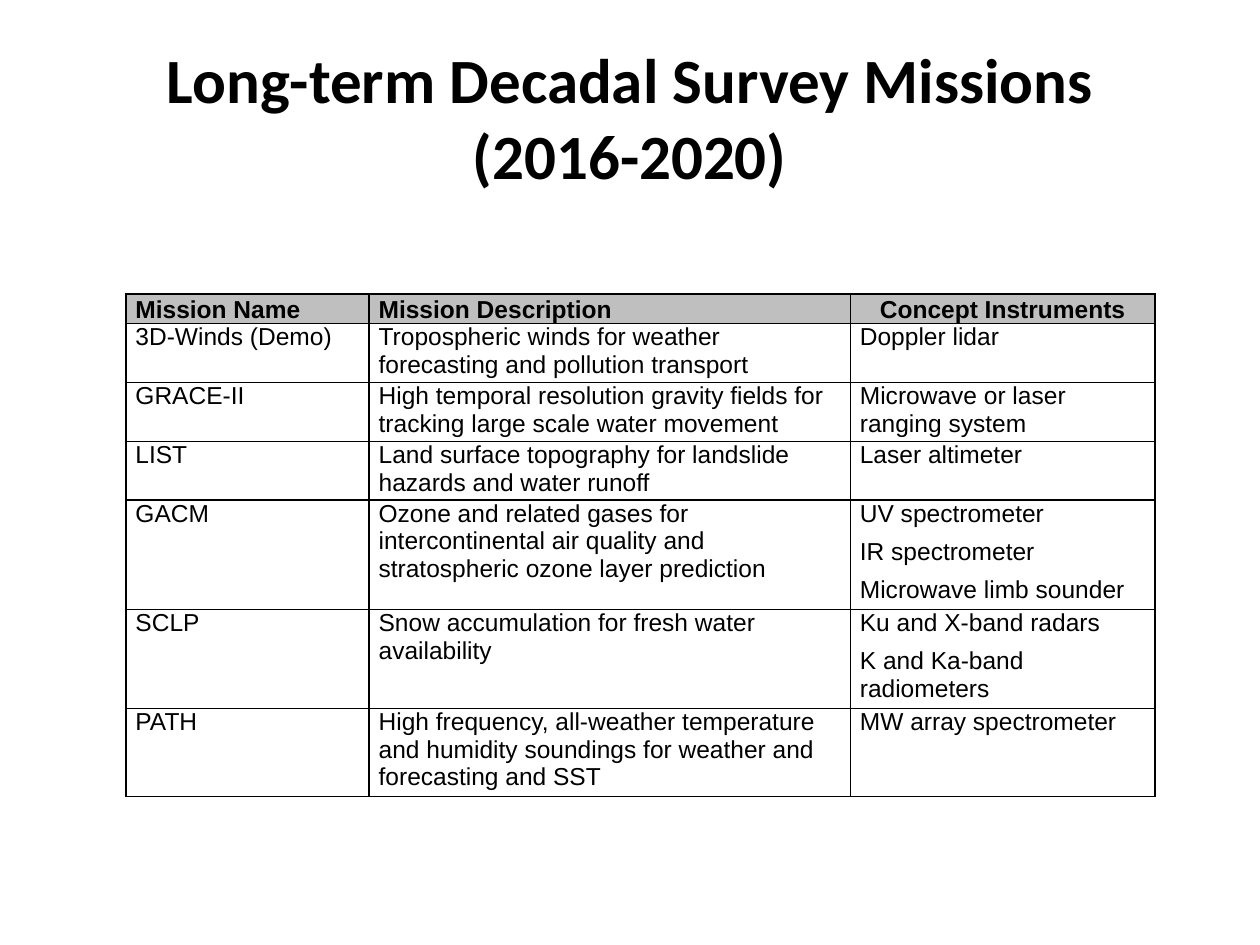
"""Build a slide with a table of long-term Decadal Survey missions."""
from lxml.etree import SubElement
from pptx import Presentation
from pptx.dml.color import RGBColor as RGB
from pptx.enum.text import MSO_ANCHOR as ANCHOR, PP_ALIGN as ALIGN
from pptx.oxml.ns import qn
from pptx.util import Pt

TITLE = "Long-term Decadal Survey Missions\v(2016-2020)"
HEADER = ("Mission Name", "Mission Description", "Concept Instruments")
MISSIONS = [
    ("3D-Winds (Demo)",
     "Tropospheric winds for weather forecasting and pollution transport",
     "Doppler lidar"),
    ("GRACE-II",
     "High temporal resolution gravity fields for tracking large scale water movement",
     "Microwave or laser ranging system"),
    ("LIST",
     "Land surface topography for landslide hazards and water runoff",
     "Laser altimeter"),
    ("GACM",
     "Ozone and related gases for intercontinental air quality and "
     "stratospheric ozone layer prediction",
     "UV spectrometer\nIR spectrometer\nMicrowave limb sounder"),
    ("SCLP",
     "Snow accumulation for fresh water availability",
     "Ku and X-band radars\nK and Ka-band radiometers"),
    ("PATH",
     "High frequency, all-weather temperature and humidity soundings for "
     "weather and forecasting and SST",
     "MW array spectrometer"),
]
THEME = {
    "title_font": "Calibri", "title_size": 36,
    "body_font": "Arial", "body_size": 14,
    "ink": "000000", "header_fill": "BFBFBF",
}
COL_WIDTHS = (139, 275, 174)
LINE_COUNTS = (1, 2, 2, 2, 3, 3, 3)
LINE_HEIGHT = 15.75
HEADER_GAP, BODY_GAP = 6, 3
LEFT, TOP = 72, 168


def style(p, font, size, bold):
    p.font.name = font
    p.font.size = Pt(size)
    p.font.bold = bold
    p.font.color.rgb = RGB.from_string(THEME["ink"])


def add_borders(cell):
    props = cell._tc.get_or_add_tcPr()
    for i, side in enumerate(("lnL", "lnR", "lnT", "lnB")):
        line = SubElement(props, qn(f"a:{side}"), w=str(Pt(1)))
        fill = SubElement(line, qn("a:solidFill"))
        SubElement(fill, qn("a:srgbClr"), val=THEME["ink"])
        props.insert(i, line)


def fill_cell(cell, text, is_header, centred):
    cell.margin_left = cell.margin_right = Pt(5.4)
    cell.margin_top = cell.margin_bottom = 0
    cell.vertical_anchor = ANCHOR.BOTTOM if is_header else ANCHOR.TOP
    if is_header:
        cell.fill.solid()
        cell.fill.fore_color.rgb = RGB.from_string(THEME["header_fill"])
    else:
        cell.fill.background()
    cell.text_frame.text = text
    for p in cell.text_frame.paragraphs:
        p.alignment = ALIGN.CENTER if centred else ALIGN.LEFT
        p.space_before = p.space_after = Pt(HEADER_GAP if is_header else BODY_GAP)
        style(p, THEME["body_font"], THEME["body_size"], is_header)
    add_borders(cell)


def add_title(s):
    tf = s.shapes.add_textbox(Pt(36), Pt(21.6), Pt(648), Pt(90)).text_frame
    tf.word_wrap = True
    tf.vertical_anchor = ANCHOR.MIDDLE
    p = tf.paragraphs[0]
    p.text = TITLE
    p.alignment = ALIGN.CENTER
    style(p, THEME["title_font"], THEME["title_size"], True)


def add_missions(s):
    rows = [HEADER, *MISSIONS]
    instrument_col = len(HEADER) - 1
    gaps = [2 * BODY_GAP * row[instrument_col].count("\n") for row in rows]
    heights = [n * LINE_HEIGHT + gap for n, gap in zip(LINE_COUNTS, gaps)]
    table = s.shapes.add_table(len(rows), len(HEADER), Pt(LEFT), Pt(TOP),
                               Pt(sum(COL_WIDTHS)), Pt(sum(heights))).table
    table.horz_banding = table.first_row = False
    for col, width in zip(table.columns, COL_WIDTHS):
        col.width = Pt(width)
    for r, (row, height) in enumerate(zip(rows, heights)):
        table.rows[r].height = Pt(height)
        for c, text in enumerate(row):
            is_header = r == 0
            fill_cell(table.cell(r, c), text, is_header,
                      is_header and c == instrument_col)


def main():
    prs = Presentation()
    prs.slide_width, prs.slide_height = Pt(720), Pt(540)
    s = prs.slides.add_slide(prs.slide_layouts[6])
    add_title(s)
    add_missions(s)
    prs.save("out.pptx")


if __name__ == "__main__":
    main()
